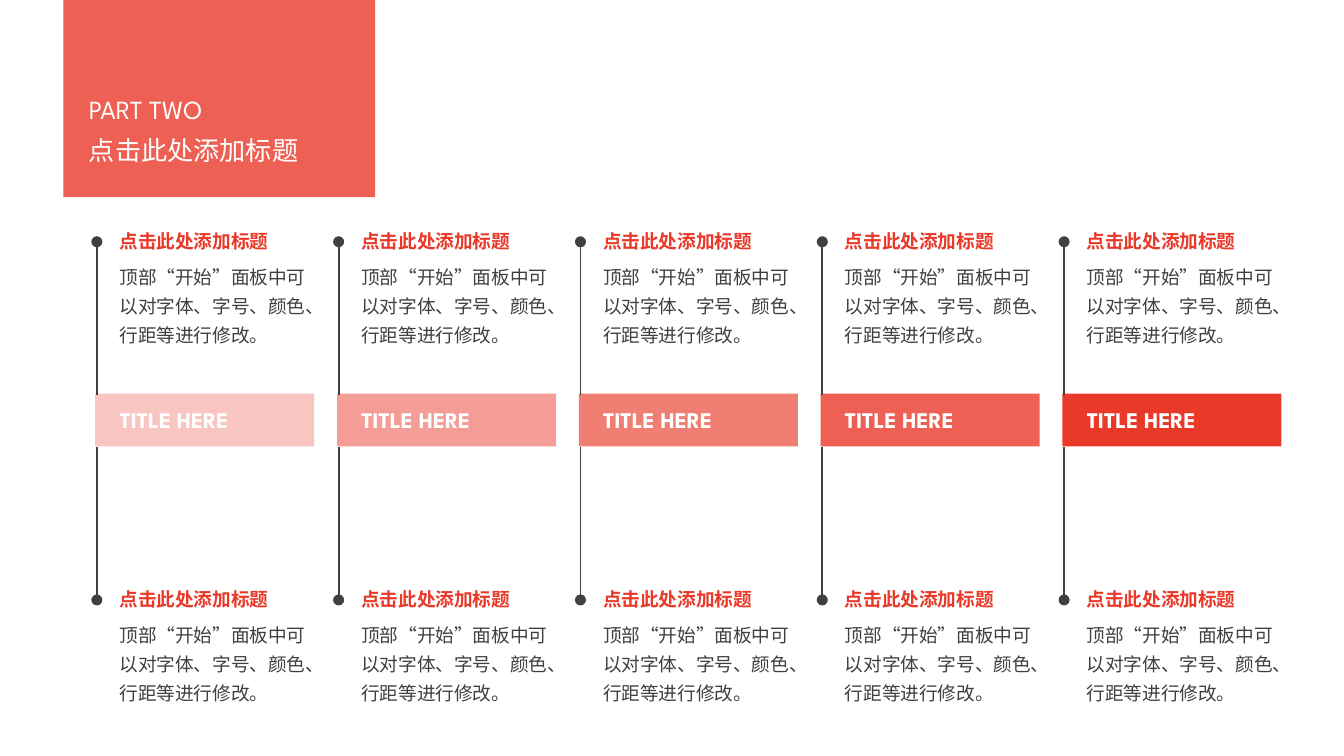
from lxml import etree
from pptx import Presentation, util as u
from pptx.dml.color import RGBColor
from pptx.enum import shapes, text
from pptx.oxml.ns import qn

COLORS = {"red": "E93929", "dark": "404040", "white": "FFFFFF"}
FONT = "League Spartan"
HEADING = "点击此处添加标题"
BODY = "顶部“开始”面板中可以对字体、字号、颜色、行距等进行修改。"


class Painter:
    """Holds the style and the slide being drawn."""

    def __init__(self, slide):
        self.slide = slide

    def color(self, name):
        return RGBColor.from_string(COLORS[name])

    def bar(self, left, top, width, height, opacity=100):
        box = self.slide.shapes.add_shape(
            shapes.MSO_SHAPE.RECTANGLE,
            u.Cm(left), u.Cm(top), u.Cm(width), u.Cm(height))
        box.shadow.inherit = False
        box.line.fill.background()
        box.fill.solid()
        box.fill.fore_color.rgb = self.color("red")
        if opacity < 100:
            tint = box.fill._xPr.find(qn("a:solidFill"))[0]
            etree.SubElement(tint, qn("a:alpha"), val=str(opacity * 1000))

    def pin(self, x, start, end):
        line = self.slide.shapes.add_connector(
            shapes.MSO_CONNECTOR.STRAIGHT,
            u.Cm(x), u.Cm(start), u.Cm(x), u.Cm(end))
        line.line.color.rgb = self.color("dark")
        line.line.width = u.Pt(1)
        etree.SubElement(line.line._get_or_add_ln(), qn("a:tailEnd"), type="oval")
        etree.SubElement(line._element.spPr, qn("a:effectLst"))

    def text(self, left, top, width, height, lines, size, color,
             bold=False, spacing=None, wrap=True):
        box = self.slide.shapes.add_textbox(
            u.Cm(left), u.Cm(top), u.Cm(width), u.Cm(height))
        frame = box.text_frame
        frame.word_wrap = wrap
        frame.auto_size = text.MSO_AUTO_SIZE.SHAPE_TO_FIT_TEXT
        for i, line in enumerate(lines):
            para = frame.add_paragraph() if i else frame.paragraphs[0]
            if spacing:
                para.line_spacing = spacing
            span = para.add_run()
            span.text = line
            span.font.name = FONT
            span.font.size = u.Pt(size)
            span.font.bold = bold
            span.font.color.rgb = self.color(color)


def main():
    deck = Presentation()
    deck.slide_width, deck.slide_height = u.Cm(25.4), u.Cm(14.29)
    page = deck.slides.add_slide(deck.slide_layouts[6])
    painter = Painter(page)

    # Section heading
    painter.bar(1.2, 0, 5.89, 3.73, 80)
    painter.text(1.43, 1.47, 5.16, 1.78, ["PART TWO", HEADING],
                 14, "white", spacing=1.3)

    # Five columns, from pale to full red
    for column, opacity in enumerate([29, 49, 65, 80, 100]):
        left = 1.8 + column * 4.57
        text_left = left + 0.21
        painter.bar(left, 7.44, 4.14, 1, opacity)
        painter.text(text_left, 7.55, 2.74, 0.76, ["TITLE HERE"],
                     12, "white", bold=True)

        # One pin with a note above the bar, one below
        for start, tip in [(7.46, 4.57), (8.44, 11.34)]:
            painter.pin(left + 0.03, start, tip)
            painter.text(text_left, tip + 0.2, 4.1, 1.9, [BODY],
                         10, "dark", spacing=1.3)
            painter.text(text_left, tip - 0.35, 3.4, 0.68, [HEADING],
                         10, "red", bold=True, wrap=False)

    deck.save("out.pptx")


if __name__ == "__main__":
    main()
